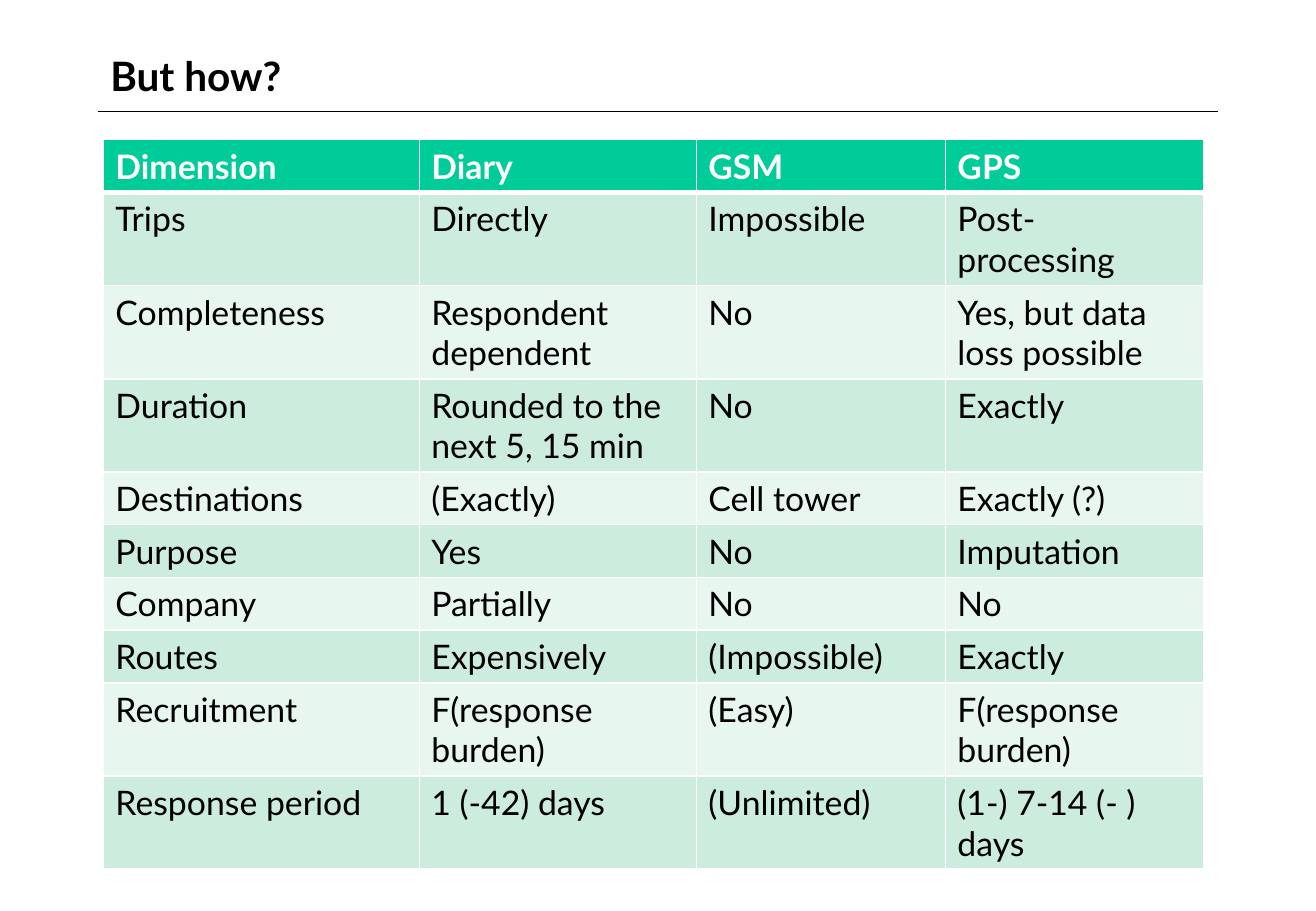
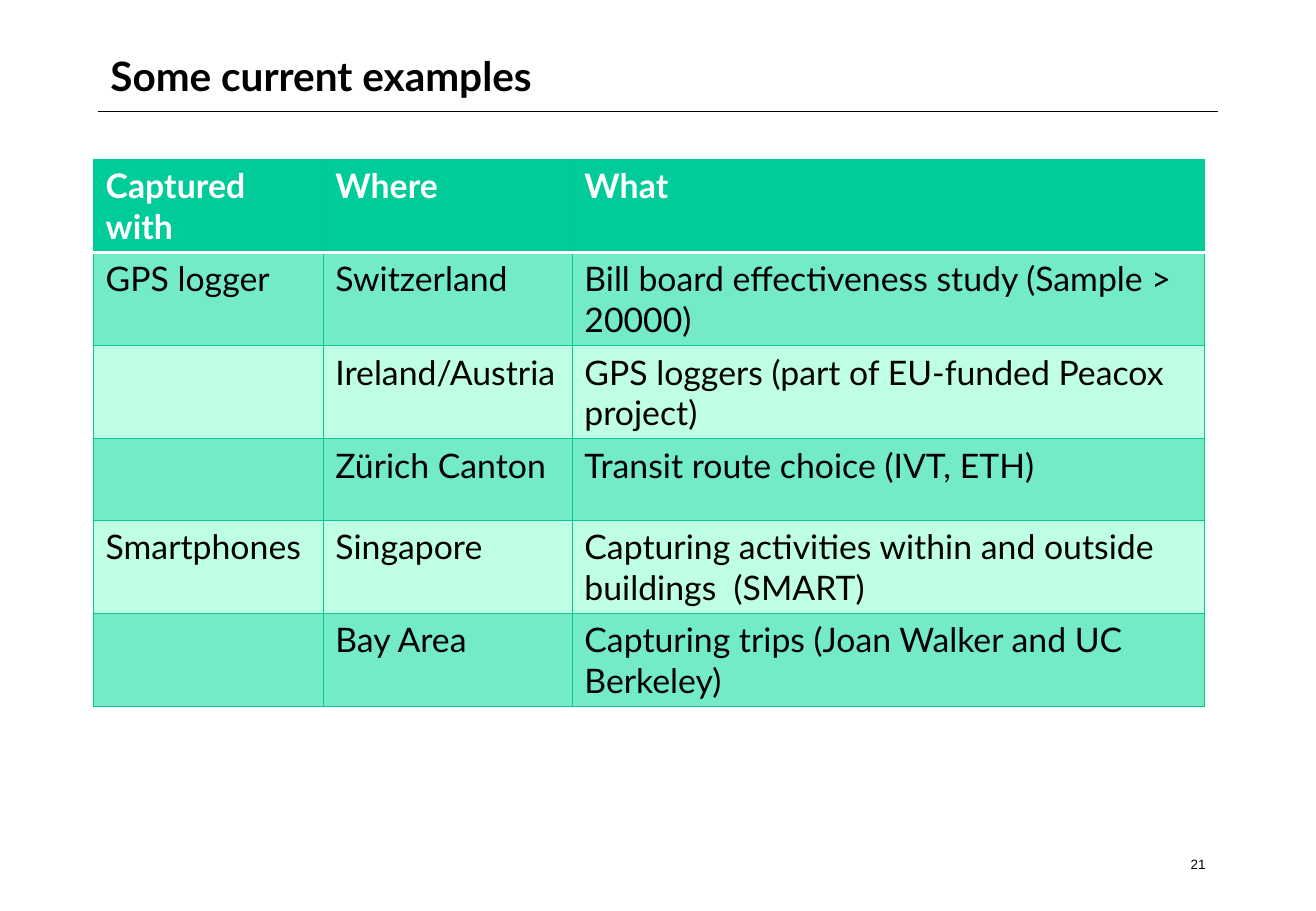
from pptx import Presentation
from pptx.dml.color import RGBColor as RGB
from pptx.enum.shapes import MSO_CONNECTOR as Conn
from pptx.enum.text import MSO_ANCHOR as Anchor, PP_ALIGN as Align
from pptx.util import Inches, Pt
from lxml.etree import SubElement as Sub
from pptx.oxml.ns import qn

# Shared look
FONT, BLACK, WHITE, GREEN = "Lato", "000000", "FFFFFF", "00CC99"
LEFT, WIDTH = 0.81, 9.21

# Content: rule is (colour, points), head is the rule under the header
SLIDES = [
    dict(
        title="But how?", page="", at=(0.85, 1.15), row=0.41,
        cols=[2.6, 2.28, 2.05, 2.13], bands=["CCECDE", "E7F6EF"],
        rule=(WHITE, 1), head=(WHITE, 3),
        rows=[
            ("Dimension", "Diary", "GSM", "GPS"),
            ("Trips", "Directly", "Impossible", "Post-processing"),
            ("Completeness", "Respondent dependent", "No",
             "Yes, but data loss possible"),
            ("Duration", "Rounded to the next 5, 15 min", "No", "Exactly"),
            ("Destinations", "(Exactly)", "Cell tower", "Exactly (?)"),
            ("Purpose", "Yes", "No", "Imputation"),
            ("Company", "Partially", "No", "No"),
            ("Routes", "Expensively", "(Impossible)", "Exactly"),
            ("Recruitment", "F(response burden)", "(Easy)",
             "F(response burden)"),
            ("Response period", "1 (-42) days", "(Unlimited)",
             "(1-) 7-14 (- ) days"),
        ]),
    dict(
        title="Some current examples", page="21", at=(0.77, 1.31), row=0.67,
        cols=[1.89, 2.05, 5.2], bands=["73EBC6", "BFFFE4"],
        rule=("00C896", 0.75), head=(WHITE, 2),
        rows=[
            ("Captured with", "Where", "What"),
            ("GPS logger", "Switzerland",
             "Bill board effectiveness study (Sample > 20000)"),
            ("", "Ireland/Austria",
             "GPS loggers (part of EU-funded Peacox project)"),
            ("", "Zürich Canton", "Transit route choice (IVT, ETH)"),
            ("Smartphones", "Singapore",
             "Capturing activities within and outside buildings  (SMART)"),
            ("", "Bay Area", "Capturing trips (Joan Walker and UC Berkeley)"),
        ]),
]


def color(code):
    return RGB.from_string(code)


def write(frame, text, size=20, font=FONT, ink=BLACK, bold=False,
          align=Align.LEFT, anchor=Anchor.TOP):
    frame.word_wrap = True
    frame.vertical_anchor = anchor
    para = frame.paragraphs[0]
    para.alignment = align
    if text:
        run = para.add_run()
        run.text = text
        run.font.size, run.font.name = Pt(size), font
        run.font.bold, run.font.color.rgb = bold, color(ink)


def add_box(slide, x, y, w, h, text, **form):
    box = slide.shapes.add_textbox(*map(Inches, (x, y, w, h)))
    write(box.text_frame, text, **form)


def add_frame(slide, title, page):
    """Title, the line under it and, if given, the page number."""
    line = slide.shapes.add_connector(
        Conn.STRAIGHT, *map(Inches, (LEFT, 0.92, LEFT + WIDTH, 0.92)))
    line.line.color.rgb, line.line.width = color(BLACK), Pt(0.75)
    Sub(line._element.spPr, qn("a:effectLst"))
    add_box(slide, LEFT, 0.33, WIDTH, 0.58, title, size=24, bold=True,
            anchor=Anchor.MIDDLE)
    if page:
        add_box(slide, 7.76, 7, 2.26, 0.33, page, size=8, font="Arial",
                align=Align.RIGHT)


def add_edge(cell, side, rule):
    code, width = rule
    edge = Sub(cell._tc.get_or_add_tcPr(), qn("a:ln" + side), w=str(Pt(width)))
    Sub(Sub(edge, qn("a:solidFill")), qn("a:srgbClr"), val=code)


def add_grid(slide, at, row, cols, bands, rule, head, rows):
    size = (sum(cols), row * len(rows))
    table = slide.shapes.add_table(
        len(rows), len(cols), *map(Inches, at + size)).table
    table.horz_banding = False
    for col, width in zip(table.columns, cols):
        col.width = Inches(width)
    for r, texts in enumerate(rows):
        top = r == 0
        for c, text in enumerate(texts):
            cell = table.cell(r, c)
            # Edges come before the fill in the cell's XML
            for side in "LRTB":
                under = (r, side) in ((0, "B"), (1, "T"))
                add_edge(cell, side, head if under else rule)
            cell.fill.solid()
            cell.fill.fore_color.rgb = color(
                GREEN if top else bands[(r - 1) % 2])
            write(cell.text_frame, text, bold=top,
                  ink=WHITE if top else BLACK)


def main():
    deck = Presentation()
    deck.slide_width, deck.slide_height = Inches(10.83), Inches(7.5)
    for item in SLIDES:
        slide = deck.slides.add_slide(deck.slide_layouts[6])
        grid = dict(item)
        add_frame(slide, grid.pop("title"), grid.pop("page"))
        add_grid(slide, **grid)
    deck.save("out.pptx")


if __name__ == "__main__":
    main()
